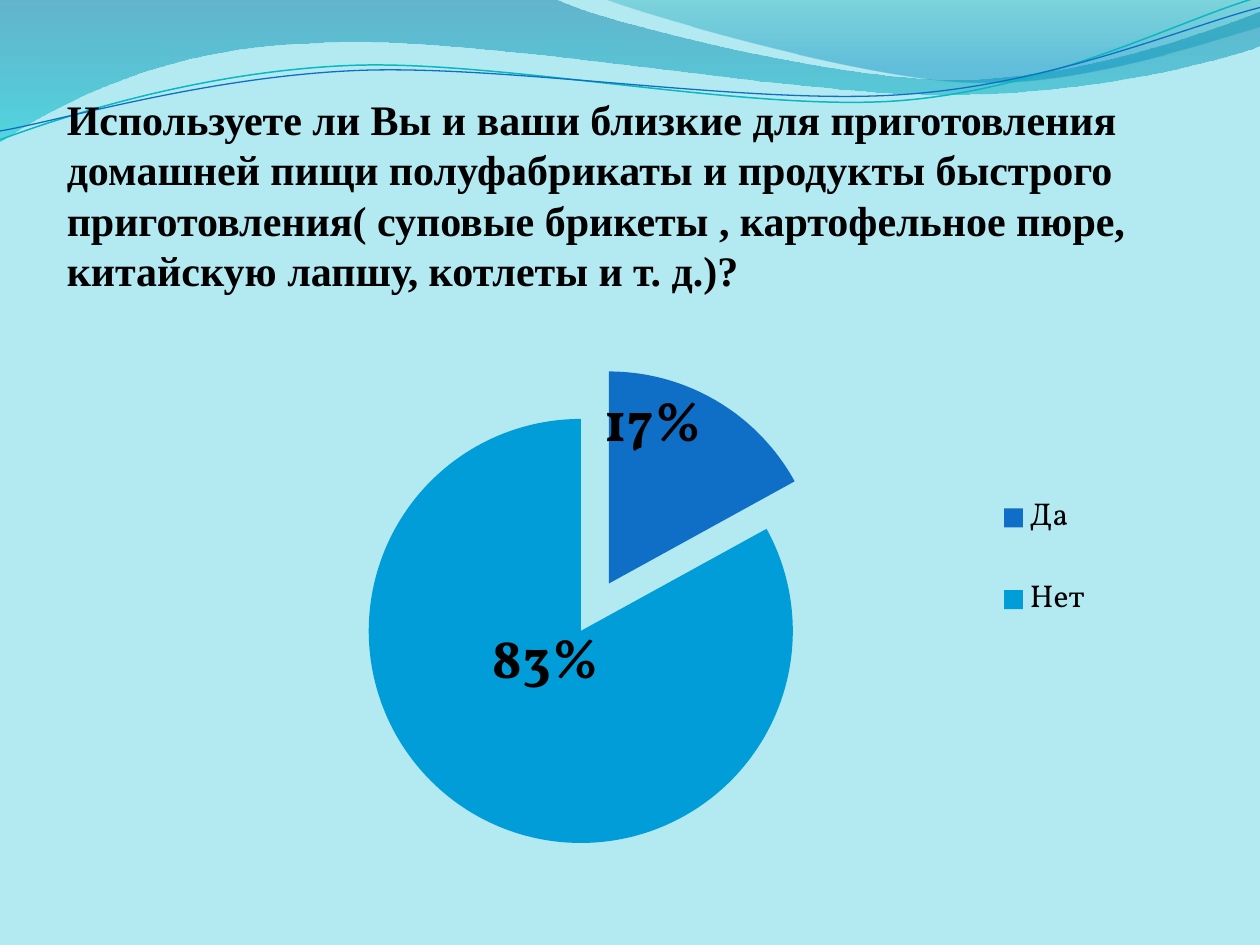
from dataclasses import dataclass
from math import cos, radians, sin
from lxml.etree import SubElement
from pptx import Presentation
from pptx.chart.data import CategoryChartData as Data
from pptx.dml.color import RGBColor as RGB
from pptx.enum.chart import XL_CHART_TYPE as Kind
from pptx.enum.chart import XL_LABEL_POSITION as Spot
from pptx.enum.chart import XL_LEGEND_POSITION as Side
from pptx.enum.text import MSO_ANCHOR as Anchor
from pptx.enum.text import PP_ALIGN as Align
from pptx.oxml.ns import qn
from pptx.util import Inches, Pt


@dataclass(frozen=True)
class Theme:
    back: str = "B3EAF2"
    ink: str = "000000"
    blue: str = "0F6FC6"
    sky: str = "009DD9"
    teal: str = "0AB8BF"
    head: int = 24
    body: int = 18
    label: int = 32
    serif: str = "Times New Roman"
    face: str = "Vollkorn"


T = Theme()
TILT = 2.7
TITLE = ("Используете ли Вы и ваши близкие для приготовления домашней пищи "
         "полуфабрикаты и продукты быстрого приготовления( суповые брикеты , "
         "картофельное пюре, китайскую лапшу, котлеты и т. д.)?")

# Each wave starts at a point; a pair is a straight step, six numbers a curve.
# Bands carry gradient stops: position, colour, opacity.
BANDS = [
    ([(0, 0), (4.4, -0.01), (4.76, 0.17, 6.64, 0.63, 7.58, 0.63),
      (8.53, 0.63, 9.58, 0.26, 10, 0.09), (10.01, 0.36),
      (9.83, 0.44, 8.7, 0.76, 7.46, 0.75),
      (6.22, 0.75, 3.82, 0.28, 2.57, 0.34),
      (1.29, 0.36, 0.46, 0.83, -0.01, 1.13), (0, 0)],
     [(0, "0074A1", 45), (1, "00C6CF", 55)]),
    ([(4.79, -0.01), (5.09, 0.11, 6.82, 0.62, 7.69, 0.65),
      (8.56, 0.69, 9.61, 0.32, 10, 0.21), (10, 0), (4.79, -0.01)],
     [(0, "00A1A9", 30), (0.8, "008BBF", 45)]),
]
# Lines carry their middle, colour and width.
LINES = [
    ([(0, 1.11), (0.48, 0.93, 1.58, 0.57, 2.77, 0.52),
      (3.95, 0.47, 5.93, 0.89, 7.13, 0.8),
      (8.33, 0.71, 9.38, 0.15, 9.98, -0.02)], (4.99, 0.57), T.teal, 0.85),
    ([(0, 1.04), (0.47, 0.96, 1.64, 0.61, 2.83, 0.56),
      (4.03, 0.51, 5.97, 0.84, 7.17, 0.75),
      (8.36, 0.67, 9.41, 0.21, 10, 0.06)], (5, 0.59), T.blue, 0.75),
]


def style(font, size, face, bold=False, color=T.ink):
    font.size, font.name, font.bold = Pt(size), face, bold
    font.color.rgb = RGB.from_string(color)


def write(frame, text, align=Align.LEFT, **form):
    frame.word_wrap = True
    frame.vertical_anchor = Anchor.TOP
    para = frame.paragraphs[0]
    para.alignment = align
    run = para.add_run()
    run.text = text
    style(run.font, **form)


def pairs(step):
    return list(zip(step[::2], step[1::2]))


def turn(step, mid, angle):
    """Turn every point of a step about a middle."""
    c, s = cos(radians(angle)), sin(radians(angle))
    flat = []
    for x, y in pairs(step):
        dx, dy = x - mid[0], y - mid[1]
        flat += [mid[0] + dx * c - dy * s, mid[1] + dx * s + dy * c]
    return tuple(flat)


def outline(slide, steps, close):
    first, *rest = [(Inches(s[-2]), Inches(s[-1])) for s in steps]
    pen = slide.shapes.build_freeform(*first)
    pen.add_line_segments(rest, close=close)
    shape = pen.convert_to_shape()
    shape.shadow.inherit = False
    # Bend the steps that have control points
    nodes = list(shape.element.iter(qn("a:lnTo")))
    for node, step in zip(nodes, steps[1:]):
        if len(step) == 2:
            continue
        end = node[0]
        node.tag = qn("a:cubicBezTo")
        for x, y in pairs(step[:4]):
            knot = SubElement(node, qn("a:pt"), x=str(Inches(x) - shape.left),
                              y=str(Inches(y) - shape.top))
            end.addprevious(knot)
    return shape


def band(slide, steps, stops):
    shape = outline(slide, steps, True)
    shape.line.fill.background()
    shape.fill.gradient()
    shape.fill.gradient_angle = 270
    for stop, (place, color, _) in zip(shape.fill.gradient_stops, stops):
        stop.position = place
        stop.color.rgb = RGB.from_string(color)
    marks = shape.element.spPr.iter(qn("a:gs"))
    for mark, (_, _, alpha) in zip(marks, stops):
        SubElement(mark[0], qn("a:alpha"), val=str(alpha * 1000))


def wave(slide, steps, mid, color, width):
    shape = outline(slide, [turn(s, mid, TILT) for s in steps], False)
    shape.rotation = 360 - TILT
    shape.fill.background()
    shape.line.color.rgb = RGB.from_string(color)
    shape.line.width = Pt(width)


def place(node, after, inner=False, **spots):
    """Set a manual chart layout, put right after the named child."""
    for old in node.findall(qn("c:layout")):
        node.remove(old)
    layout = SubElement(node, qn("c:layout"))
    manual = SubElement(layout, qn("c:manualLayout"))
    if inner:
        SubElement(manual, qn("c:layoutTarget"), val="inner")
    if "w" in spots:
        for axis in "xy":
            SubElement(manual, qn(f"c:{axis}Mode"), val="edge")
    for key, value in spots.items():
        SubElement(manual, qn(f"c:{key}"), val=str(value))
    if after:
        node.find(qn(after)).addnext(layout)
    else:
        node.insert(0, layout)


def pie(slide):
    data = Data()
    data.categories = ["Да", "Нет"]
    data.add_series("Series 1", (17, 83))
    chart = slide.shapes.add_chart(
        Kind.PIE, Inches(1.38), Inches(2.25), Inches(7.51), Inches(5.14),
        data).chart
    style(chart.font, T.body, T.face)
    chart.has_title = False
    plot = chart.plots[0]
    plot.vary_by_categories = True
    series = plot.series[0]

    # Slices and their percentages
    for i, color in enumerate((T.blue, T.sky)):
        point = series.points[i]
        point.format.fill.solid()
        point.format.fill.fore_color.rgb = RGB.from_string(color)
        point.format.line.fill.background()
        label = point.data_label
        style(label.font, T.label, T.face, bold=True)
        label.position = Spot.CENTER
    root = series._element
    for node, (x, y) in zip(root.iter(qn("c:dLbl")),
                            ((-0.01, -0.1), (0.02, -0.09))):
        node.find(qn("c:showVal")).set("val", "0")
        node.find(qn("c:showPercent")).set("val", "1")
        place(node, "c:idx", x=x, y=y)
    burst = SubElement(root, qn("c:explosion"), val="13")
    root.find(qn("c:dPt")).addprevious(burst)

    # Plot and legend places
    area = plot._element.getparent()
    place(area, None, inner=True, x=0.19, y=0.13, w=0.51, h=0.74)
    chart.has_legend = True
    legend = chart.legend
    legend.position = Side.RIGHT
    legend.include_in_layout = False
    style(legend.font, T.body, T.face)
    place(legend._element, "c:legendPos", x=0.85, y=0.27, w=0.14, h=0.31)


def main():
    deck = Presentation()
    deck.slide_width, deck.slide_height = Inches(10), Inches(7.5)
    slide = deck.slides.add_slide(deck.slide_layouts[5])
    slide.background.fill.solid()
    slide.background.fill.fore_color.rgb = RGB.from_string(T.back)

    # Waves along the top edge
    for steps, stops in BANDS:
        band(slide, steps, stops)
    for steps, mid, color, width in LINES:
        wave(slide, steps, mid, color, width)

    # Question, in front of the waves
    title = slide.shapes.title
    title.left, title.top = Inches(0.43), Inches(0.69)
    title.width, title.height = Inches(8.9), Inches(1.72)
    write(title.text_frame, TITLE, size=T.head, face=T.serif, bold=True)
    title.element.getparent().append(title.element)

    pie(slide)
    deck.save("out.pptx")


if __name__ == "__main__":
    main()
